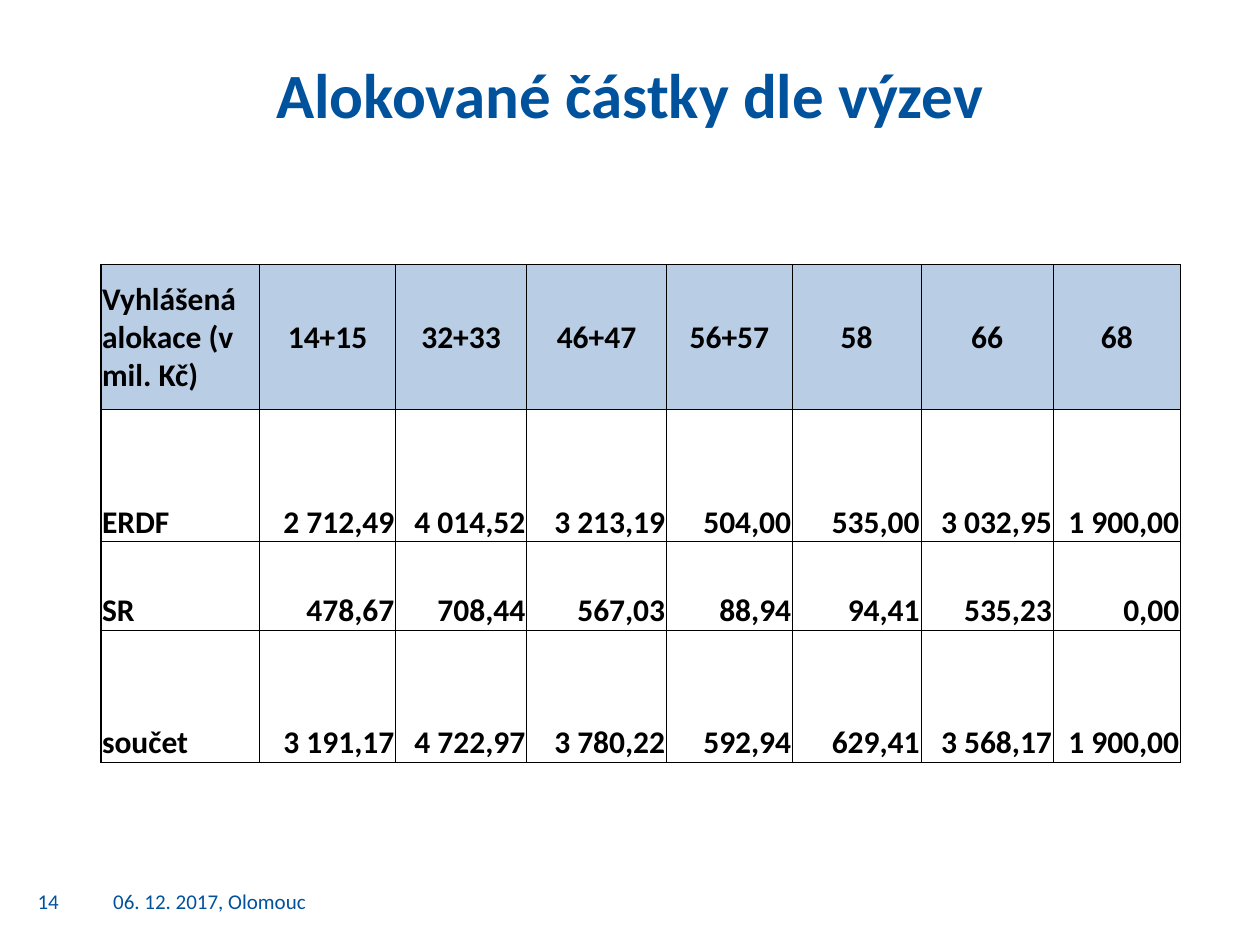
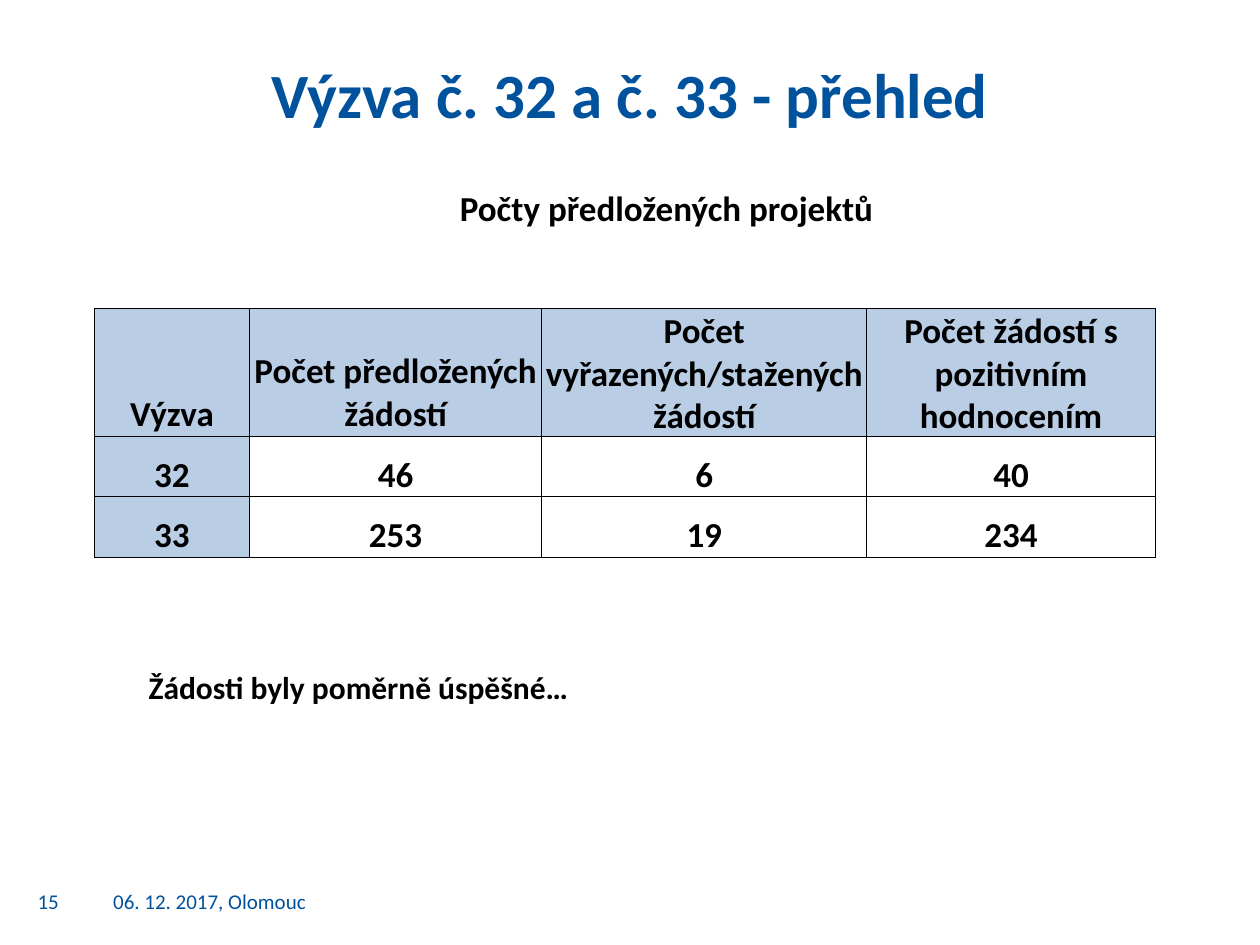
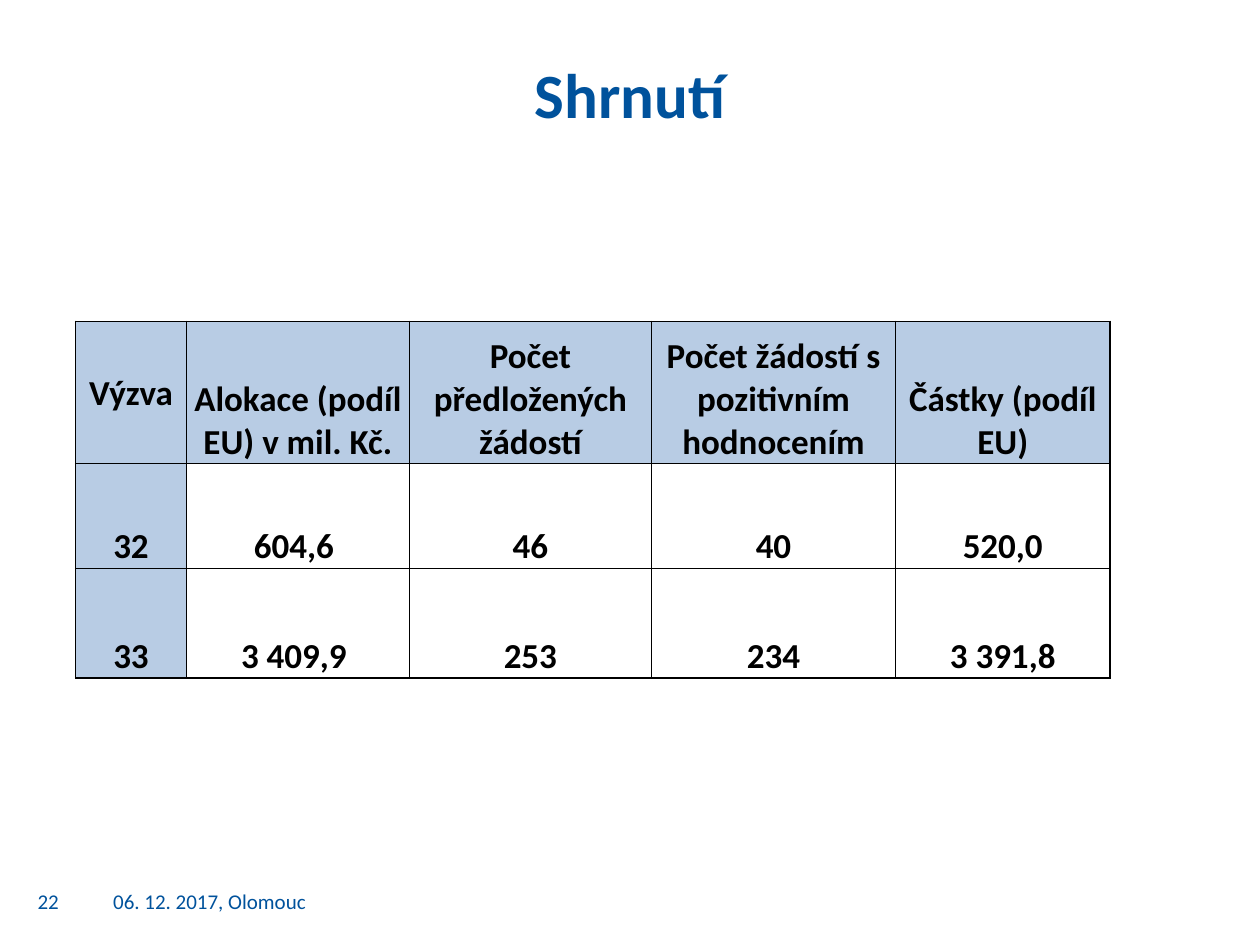
from lxml import etree
from pptx import Presentation
from pptx.dml.color import RGBColor
from pptx.enum.text import MSO_ANCHOR, MSO_AUTO_SIZE, PP_ALIGN
from pptx.oxml.ns import qn
from pptx.util import Inches, Pt

LEFT, CENTER, RIGHT = PP_ALIGN.LEFT, PP_ALIGN.CENTER, PP_ALIGN.RIGHT
MIDDLE, BOTTOM = MSO_ANCHOR.MIDDLE, MSO_ANCHOR.BOTTOM
NO_AUTOFIT = MSO_AUTO_SIZE.NONE
FONT = "Calibri"
COLORS = {"blue": "00529C", "text": "000000", "header": "B9CDE5", "summary": "B8CCE4"}
SIDES = ("L", "R", "T", "B")
THIN, THICK = 0.5, 1

TITLE_BOX = (0.5, 0.29, 9, 0.9)
BODY_BOX = (1.08, 1.43, 8.42, 5.27)
NUMBER_BOX = (0.2, 6.95, 0.55, 0.4)
FOOTER_BOX = (0.8, 6.95, 5.79, 0.4)
FOOTER = "06. 12. 2017, Olomouc"

SLIDES = [
    {
        "title": "Alokované částky dle výzev",
        "number": 14,
        "table": {
            "at": (0.8, 2.1),
            "columns": (1.26, 1.08, 1.04, 1.11, 1, 1.02, 1.05, 1.01),
            "rows": (1.15, 1.05, 0.7, 1.05),
            "size": 18,
            "fill": "header",
            "filled_first_column": False,
            "thick_sides": "LT",
            "anchors": {"corner": MIDDLE, "header": MIDDLE},
            "alignments": {"first": LEFT, "header": CENTER, "value": RIGHT},
            "cells": [
                ("Vyhlášená alokace (v mil. Kč)", "14+15", "32+33", "46+47",
                 "56+57", "58", "66", "68"),
                ("ERDF", "2 712,49", "4 014,52", "3 213,19",
                 "504,00", "535,00", "3 032,95", "1 900,00"),
                ("SR", "478,67", "708,44", "567,03", "88,94", "94,41", "535,23", "0,00"),
                ("součet", "3 191,17", "4 722,97", "3 780,22",
                 "592,94", "629,41", "3 568,17", "1 900,00"),
            ],
        },
    },
    {
        "title": "Výzva č. 32 a č. 33 - přehled",
        "number": 15,
        # text, size, alignment, space before in points
        "body": [
            ("Počty předložených projektů", 20, CENTER, 0),
            ("Žádosti byly poměrně úspěšné…", 18, LEFT, 251),
        ],
        "table": {
            "at": (0.75, 2.45),
            "columns": (1.23, 2.32, 2.58, 2.29),
            "rows": (0.97, 0.48, 0.48),
            "size": 20,
            "fill": "header",
            "filled_first_column": True,
            "thick_sides": "",
            "anchors": {"corner": BOTTOM, "header": BOTTOM},
            "alignments": {"first": CENTER, "header": CENTER, "value": CENTER},
            "cells": [
                ("Výzva", "Počet předložených žádostí",
                 "Počet vyřazených/stažených žádostí",
                 "Počet žádostí s pozitivním hodnocením"),
                ("32", "46", "6", "40"),
                ("33", "253", "19", "234"),
            ],
        },
    },
    {
        "title": "Shrnutí",
        "number": 22,
        "table": {
            "at": (0.6, 2.55),
            "columns": (0.88, 1.77, 1.92, 1.94, 1.7),
            "rows": (1.13, 0.83, 0.87),
            "size": 20,
            "fill": "summary",
            "filled_first_column": True,
            "thick_sides": "LRTB",
            "anchors": {"corner": MIDDLE, "header": BOTTOM},
            "alignments": {"first": CENTER, "header": CENTER, "value": CENTER},
            "cells": [
                ("Výzva", "Alokace (podíl EU) v mil. Kč.",
                 "Počet předložených žádostí",
                 "Počet žádostí s pozitivním hodnocením", "Částky (podíl EU)"),
                ("32", "604,6 ", "46", "40", "520,0"),
                ("33", "3 409,9 ", "253", "234", "3 391,8"),
            ],
        },
    },
]


def color(name):
    return RGBColor.from_string(COLORS[name])


def place(shape, box):
    shape.left, shape.top, shape.width, shape.height = map(Inches, box)


def format_paragraph(paragraph, size, color_name, bold=False, alignment=LEFT):
    paragraph.alignment = alignment
    for run in paragraph.runs:
        run.font.name = FONT
        run.font.size = Pt(size)
        run.font.bold = bold
        run.font.color.rgb = color(color_name)


def set_title(slide, text):
    title = slide.shapes.title
    place(title, TITLE_BOX)
    frame = title.text_frame
    frame.text = text
    frame.auto_size = NO_AUTOFIT
    frame.vertical_anchor = MIDDLE
    format_paragraph(frame.paragraphs[0], 36, "blue", True, CENTER)


def add_footer_text(slide, text, box):
    frame = slide.shapes.add_textbox(*map(Inches, box)).text_frame
    frame.word_wrap = True
    frame.vertical_anchor = MIDDLE
    frame.text = text
    format_paragraph(frame.paragraphs[0], 12, "blue")


def fill_body(slide, lines):
    body = slide.placeholders[1]
    place(body, BODY_BOX)
    frame = body.text_frame
    frame.auto_size = NO_AUTOFIT
    frame.text = "\n".join(line[0] for line in lines)
    for paragraph, (_, size, alignment, space) in zip(frame.paragraphs, lines):
        properties = paragraph._p.get_or_add_pPr()
        properties.set("marL", "0")
        properties.set("indent", "0")
        etree.SubElement(properties, qn("a:buNone"))
        paragraph.space_before = Pt(space)
        format_paragraph(paragraph, size, "text", True, alignment)


def set_borders(cell, thick_sides):
    properties = cell._tc.get_or_add_tcPr()
    for side in SIDES:
        width = THICK if side in thick_sides else THIN
        line = etree.SubElement(properties, qn(f"a:ln{side}"), w=str(Pt(width)))
        fill = etree.SubElement(line, qn("a:solidFill"))
        etree.SubElement(fill, qn("a:srgbClr"), val=COLORS["text"])


def format_cell(cell, row, column, table_data):
    last_row = len(table_data["rows"]) - 1
    last_column = len(table_data["columns"]) - 1
    on_edge = {"L": column == 0, "R": column == last_column,
               "T": row == 0, "B": row == last_row}
    set_borders(cell, [side for side in table_data["thick_sides"] if on_edge[side]])

    if row == 0 or (column == 0 and table_data["filled_first_column"]):
        cell.fill.solid()
        cell.fill.fore_color.rgb = color(table_data["fill"])
    else:
        cell.fill.background()

    cell.margin_left = cell.margin_right = cell.margin_top = Inches(0.01)
    cell.margin_bottom = 0
    anchors = table_data["anchors"]
    if row == 0:
        cell.vertical_anchor = anchors["corner" if column == 0 else "header"]
    else:
        cell.vertical_anchor = BOTTOM
    role = "first" if column == 0 else "header" if row == 0 else "value"
    format_paragraph(cell.text_frame.paragraphs[0], table_data["size"], "text",
                     True, table_data["alignments"][role])


def add_data_table(slide, table_data):
    columns, rows = table_data["columns"], table_data["rows"]
    box = (*table_data["at"], sum(columns), sum(rows))
    table = slide.shapes.add_table(len(rows), len(columns), *map(Inches, box)).table
    table.first_row = table.horz_banding = False
    for column, width in zip(table.columns, columns):
        column.width = Inches(width)
    for row, height in zip(table.rows, rows):
        row.height = Inches(height)
    for row, texts in enumerate(table_data["cells"]):
        for column, text in enumerate(texts):
            cell = table.cell(row, column)
            cell.text_frame.text = text
            format_cell(cell, row, column, table_data)


def main():
    presentation = Presentation()
    presentation.slide_width, presentation.slide_height = Inches(10), Inches(7.5)
    title_and_content, title_only = (presentation.slide_layouts[i] for i in (1, 5))
    for content in SLIDES:
        layout = title_and_content if "body" in content else title_only
        slide = presentation.slides.add_slide(layout)
        set_title(slide, content["title"])
        if "body" in content:
            fill_body(slide, content["body"])
        add_footer_text(slide, FOOTER, FOOTER_BOX)
        add_footer_text(slide, str(content["number"]), NUMBER_BOX)
        add_data_table(slide, content["table"])
    presentation.save("out.pptx")


if __name__ == "__main__":
    main()
